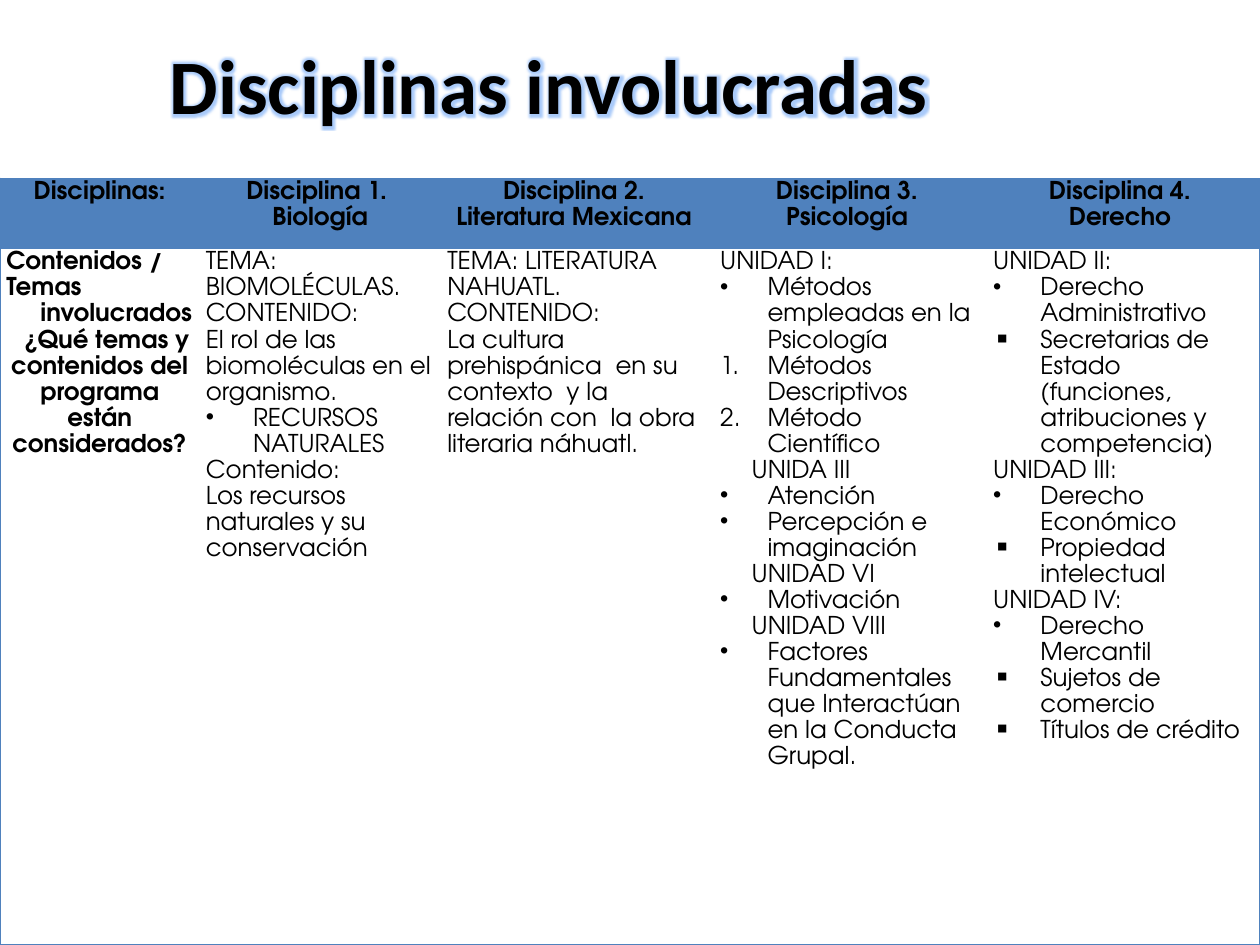
from lxml import etree
from pptx import Presentation
from pptx.dml.color import RGBColor
from pptx.enum import text
from pptx.oxml import ns
from pptx.util import Pt

BLUE, BLACK = "4F81BD", "000000"


def color(value):
    return RGBColor.from_string(value)


def add_xml(parent, tag, **attributes):
    return etree.SubElement(parent, ns.qn(tag), attributes)


deck = Presentation()
deck.slide_width, deck.slide_height = Pt(720), Pt(540)
slide = deck.slides.add_slide(deck.slide_layouts[6])

heading = slide.shapes.add_textbox(Pt(90), Pt(18), Pt(461.5), Pt(60.5)).text_frame
heading.word_wrap = False
heading.auto_size = text.MSO_AUTO_SIZE.SHAPE_TO_FIT_TEXT
title = heading.paragraphs[0].add_run()
title.text = "Disciplinas involucradas"
for name, value in {"name": "Calibri", "size": Pt(44), "bold": True}.items():
    setattr(title.font, name, value)
title.font.color.rgb = color(BLACK)
effects = etree.Element(ns.qn("a:effectLst"))
glow = add_xml(effects, "a:glow", rad="63500")
glow_color = add_xml(glow, "a:srgbClr", val="8DB9F8")
add_xml(glow_color, "a:alpha", val="75000")
title.font.fill._xPr.find(ns.qn("a:solidFill")).addnext(effects)

headers = [
    ["Disciplinas:"],
    ["Disciplina 1. ", "Biología"],
    ["Disciplina 2. ", "Literatura Mexicana "],
    ["Disciplina 3. ", "Psicología "],
    ["Disciplina 4. ", "Derecho "],
]
contents = [
    [
        "Contenidos / Temas",
        ("name", "involucrados"),
        ("question", "¿Qué temas y contenidos del programa están considerados?"),
    ],
    [
        "TEMA: BIOMOLÉCULAS.",
        "CONTENIDO:",
        "El rol de las biomoléculas en el organismo.",
        ("•", "RECURSOS NATURALES"),
        "Contenido:",
        "Los recursos naturales y su conservación",
    ],
    [
        "TEMA: LITERATURA NAHUATL.",
        "CONTENIDO:",
        "La cultura prehispánica  en su contexto  y la relación con  la obra literaria náhuatl.",
    ],
    [
        "UNIDAD I:",
        ("•", "Métodos empleadas en la Psicología"),
        ("1.", "Métodos Descriptivos"),
        ("1.", "Método Científico"),
        ("unit", "UNIDA III"),
        ("•", "Atención"),
        ("•", "Percepción e imaginación"),
        ("unit", "UNIDAD VI"),
        ("•", "Motivación"),
        ("unit", "UNIDAD VIII"),
        ("•", "Factores Fundamentales que Interactúan en la Conducta Grupal."),
    ],
    [
        "UNIDAD II:",
        ("•", "Derecho Administrativo"),
        ("▪", "Secretarias de Estado (funciones, atribuciones y competencia)"),
        "UNIDAD III:",
        ("•", "Derecho Económico"),
        ("▪", "Propiedad intelectual"),
        "UNIDAD IV:",
        ("•", "Derecho Mercantil"),
        ("▪", "Sujetos de comercio"),
        ("▪", "Títulos de crédito"),
    ],
]
indents = {
    "plain": (0, 0), "name": (19.5, 0), "question": (0, 8), "unit": (18, 0),
    "•": (27, -27), "▪": (27, -27), "1.": (27, -27),
}
widths, heights = [114, 138, 156, 156, 156], [40, 398]
margins = {"margin_left": Pt(3.6), "margin_right": Pt(3.6), "margin_top": 0, "margin_bottom": 0}

frame = slide.shapes.add_table(2, 5, 0, Pt(102), Pt(sum(widths)), Pt(sum(heights)))
table = frame.table
table_style = table._tbl.tblPr.find(ns.qn("a:tableStyleId"))
table_style.text = "{2D5ABB26-0587-4C30-8999-92F81FD0307C}"
table.horz_banding = False
for column, width in zip(table.columns, widths):
    column.width = Pt(width)
for row, height in zip(table.rows, heights):
    row.height = Pt(height)

for r, entries in enumerate([headers, contents]):
    for c, entry in enumerate(entries):
        cell = table.cell(r, c)
        for name, value in margins.items():
            setattr(cell, name, value)

        edges = [edge for edge, shown in
                 {"L": c == 0, "R": c == 4, "T": True, "B": True}.items() if shown]
        for edge in edges:
            border = add_xml(cell._tc.get_or_add_tcPr(), f"a:ln{edge}", w="12700")
            add_xml(add_xml(border, "a:solidFill"), "a:srgbClr", val=BLUE)
        if r == 0:
            cell.fill.solid()
            cell.fill.fore_color.rgb = color(BLUE)
        else:
            cell.fill.background()

        for i, item in enumerate(entry):
            kind, words = ("plain", item) if isinstance(item, str) else item
            paragraph = cell.text_frame.paragraphs[0] if i == 0 else cell.text_frame.add_paragraph()
            centered = r == 0 or kind == "question"
            paragraph.alignment = text.PP_ALIGN.CENTER if centered else text.PP_ALIGN.LEFT
            paragraph.line_spacing = 1.15
            properties = paragraph._p.get_or_add_pPr()
            left, first = indents[kind]
            properties.set("marL", str(Pt(left)))
            properties.set("indent", str(Pt(first)))
            if kind == "1.":
                add_xml(properties, "a:buAutoNum", type="arabicPeriod")
            elif kind in ("•", "▪"):
                add_xml(properties, "a:buChar", char=kind)
            else:
                add_xml(properties, "a:buNone")
            run = paragraph.add_run()
            run.text = words
            font = {"name": "TeX Gyre Adventor", "size": Pt(14), "bold": r == 0 or c == 0}
            for name, value in font.items():
                setattr(run.font, name, value)
            run.font.color.rgb = color(BLACK)

deck.save("out.pptx")
